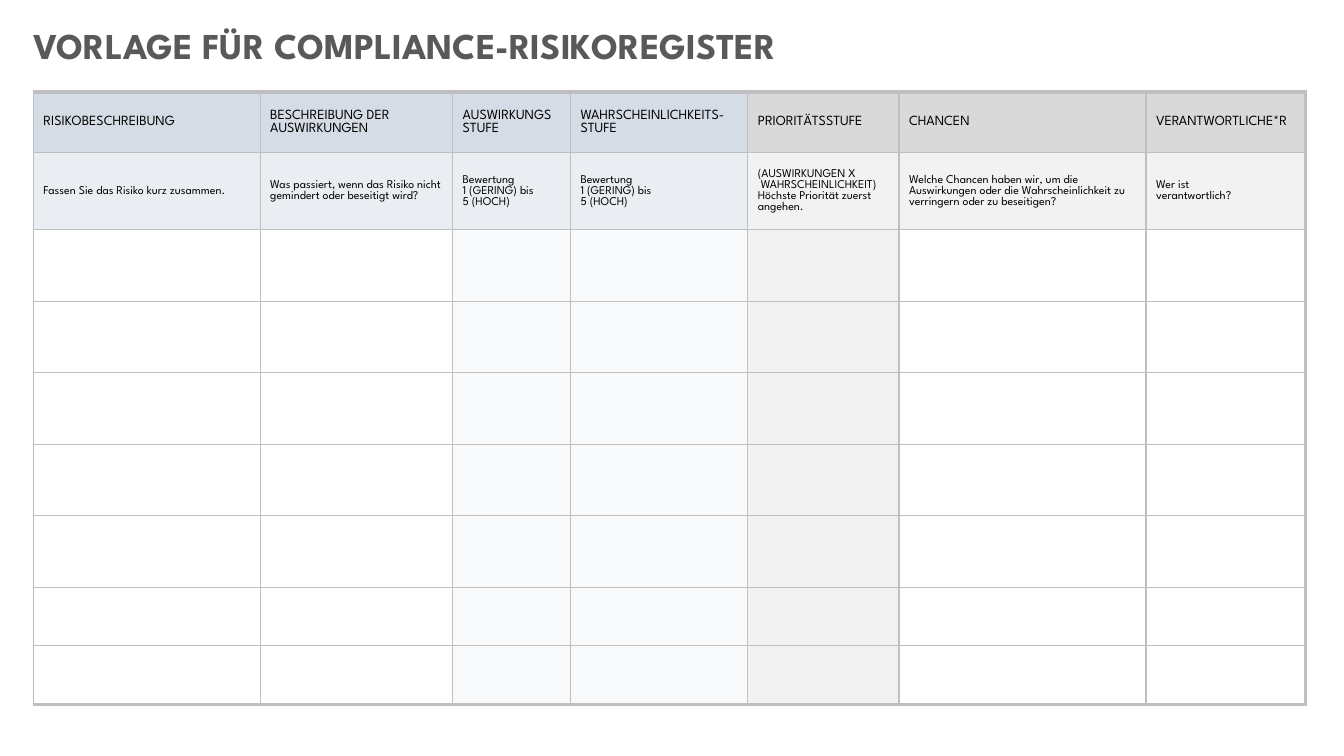
"""Build the compliance risk register template slide."""
from lxml.etree import SubElement
from pptx import Presentation
from pptx.dml.color import RGBColor
from pptx.enum.text import MSO_ANCHOR, MSO_AUTO_SIZE, PP_ALIGN
from pptx.oxml.ns import qn
from pptx.util import Pt

TITLE = "VORLAGE FÜR COMPLIANCE-RISIKOREGISTER"
HEADINGS = [
    "RISIKOBESCHREIBUNG",
    "BESCHREIBUNG DER AUSWIRKUNGEN",
    "AUSWIRKUNGS\vSTUFE",
    "WAHRSCHEINLICHKEITS-\vSTUFE",
    "PRIORITÄTSSTUFE",
    "CHANCEN",
    "VERANTWORTLICHE*R",
]
RATING = "Bewertung\v1 (GERING) bis\v5 (HOCH)"
HINTS = [
    "Fassen Sie das Risiko kurz zusammen.",
    "Was passiert, wenn das Risiko nicht gemindert oder beseitigt wird?",
    RATING,
    RATING,
    "(AUSWIRKUNGEN X\v WAHRSCHEINLICHKEIT)\vHöchste Priorität zuerst angehen.",
    "Welche Chancen haben wir, um die Auswirkungen oder die "
    "Wahrscheinlichkeit zu verringern oder zu beseitigen?",
    "Wer ist\nverantwortlich?",
]

FONT = "League Spartan"
BLACK = RGBColor(0x00, 0x00, 0x00)
WHITE = RGBColor(0xFF, 0xFF, 0xFF)
TITLE_GREY = RGBColor(0x59, 0x59, 0x59)
BORDER_GREY = RGBColor(0xBF, 0xBF, 0xBF)
BLUE = RGBColor(0xD6, 0xDC, 0xE5)
LIGHT_BLUE = RGBColor(0xEA, 0xEE, 0xF3)
PALE_BLUE = RGBColor(0xF7, 0xF9, 0xFB)
GREY = RGBColor(0xD9, 0xD9, 0xD9)
LIGHT_GREY = RGBColor(0xF2, 0xF2, 0xF2)

COLUMN_WIDTHS = [162, 137.5, 84.2, 126.7, 108, 176.4, 113.8]
ROW_HEIGHTS = [43.2, 55.4] + [51.1] * 5 + [41.8] * 2
HEADING_FILLS = [BLUE] * 4 + [GREY] * 3
HINT_FILLS = [LIGHT_BLUE] * 4 + [LIGHT_GREY] * 3
ENTRY_FILLS = [WHITE] * 2 + [PALE_BLUE] * 2 + [LIGHT_GREY] + [WHITE] * 2
LAST_ROW = len(ROW_HEIGHTS) - 1
LAST_COLUMN = len(COLUMN_WIDTHS) - 1


def format_text(frame, size, color, bold=False):
    for para in frame.paragraphs:
        para.alignment = PP_ALIGN.LEFT
        for line_break in para._p.findall(qn("a:br")):
            SubElement(line_break, qn("a:rPr"), sz=str(int(size * 100)))
        for span in para.runs:
            span.font.name = FONT
            span.font.size = Pt(size)
            span.font.bold = bold
            span.font.color.rgb = color


def add_borders(cell, row, column):
    widths = {
        "a:lnL": 1,
        "a:lnR": 2.25 if column == LAST_COLUMN else 1,
        "a:lnT": 3 if row == 0 else 1,
        "a:lnB": 2.25 if row == LAST_ROW else 1,
    }
    properties = cell._tc.get_or_add_tcPr()
    for index, (side, width) in enumerate(widths.items()):
        line = SubElement(properties, qn(side), w=str(Pt(width)))
        fill = SubElement(line, qn("a:solidFill"))
        SubElement(fill, qn("a:srgbClr"), val=str(BORDER_GREY))
        properties.insert(index, line)


def fill_cell(cell, row, column):
    fills = {0: HEADING_FILLS, 1: HINT_FILLS}.get(row, ENTRY_FILLS)
    cell.fill.solid()
    cell.fill.fore_color.rgb = fills[column]
    add_borders(cell, row, column)
    if row < 2:
        cell.text_frame.text = (HEADINGS, HINTS)[row][column]
        format_text(cell.text_frame, (10, 8.5)[row], BLACK)
        cell.vertical_anchor = MSO_ANCHOR.MIDDLE
        cell.margin_left = Pt(7.2)
        cell.margin_top = cell.margin_right = Pt(0.7)
        cell.margin_bottom = 0


def add_title(page):
    box = page.shapes.title
    box.left, box.top, box.width, box.height = Pt(16.6), Pt(12.2), Pt(623.5), Pt(38.9)
    frame = box.text_frame
    frame.text = TITLE
    frame.word_wrap = True
    frame.auto_size = MSO_AUTO_SIZE.NONE
    frame.vertical_anchor = MSO_ANCHOR.BOTTOM
    format_text(frame, 26, TITLE_GREY, bold=True)


def add_register(page):
    table = page.shapes.add_table(
        len(ROW_HEIGHTS), len(COLUMN_WIDTHS), Pt(23.8), Pt(65.5),
        Pt(sum(COLUMN_WIDTHS)), Pt(sum(ROW_HEIGHTS))).table
    table.first_row = table.horz_banding = False
    for column, width in enumerate(COLUMN_WIDTHS):
        table.columns[column].width = Pt(width)
    for row, height in enumerate(ROW_HEIGHTS):
        table.rows[row].height = Pt(height)
        for column in range(len(COLUMN_WIDTHS)):
            fill_cell(table.cell(row, column), row, column)


def main():
    deck = Presentation()
    deck.slide_width, deck.slide_height = Pt(960), Pt(540)
    page = deck.slides.add_slide(deck.slide_layouts[5])
    add_title(page)
    add_register(page)
    deck.save("out.pptx")


if __name__ == "__main__":
    main()
